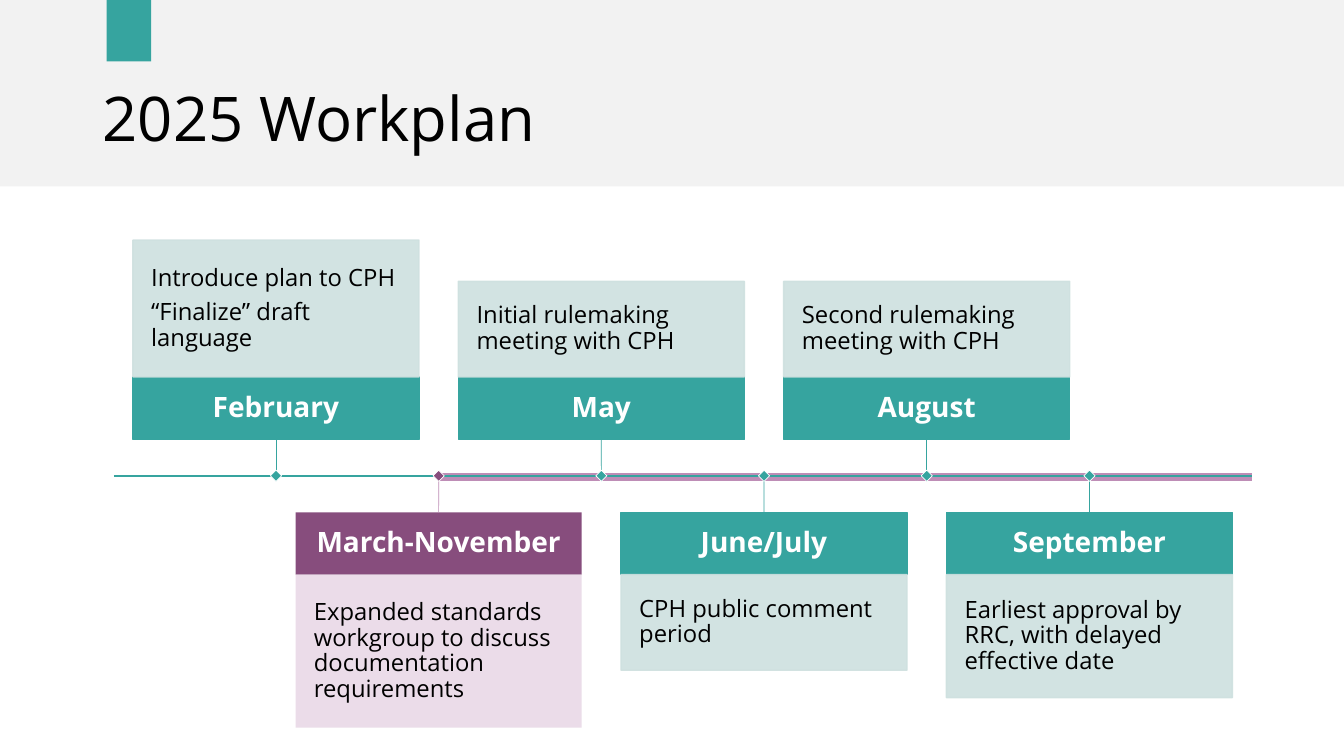
from dataclasses import dataclass

from lxml import etree
from pptx import Presentation
from pptx.dml.color import RGBColor
from pptx.enum.shapes import MSO_CONNECTOR, MSO_SHAPE
from pptx.enum.text import MSO_ANCHOR, MSO_AUTO_SIZE, PP_ALIGN
from pptx.oxml.ns import qn
from pptx.util import Cm, Pt

RECT = MSO_SHAPE.RECTANGLE
STRAIGHT = MSO_CONNECTOR.STRAIGHT
MIDDLE = MSO_ANCHOR.MIDDLE
LEFT, CENTER = PP_ALIGN.LEFT, PP_ALIGN.CENTER
NO_FIT = MSO_AUTO_SIZE.NONE

FONT = "Open Sans"
BLACK, WHITE, GREY = "000000", "FFFFFF", "F2F2F2"
TEAL, MINT = "36A49F", "CEE0DF"
PLUM, LILAC, PINK = "874D7D", "BE8DB6", "E9D9E7"

# Timeline measures in cm
FIRST, STEP, WIDTH = 3.35, 4.1, 7.21
HEAD, GAP, AXIS = 1.57, 0.92, 11.99
START, END = 2.87, 31.55
DOT = 0.2


@dataclass
class Stage:
    month: str
    tasks: list[str]
    height: float
    dark: str = TEAL
    pale: str = MINT
    stem: str = TEAL
    edged: bool = True


STAGES = [
    Stage("February", ["Introduce plan to CPH", "“Finalize” draft language"], 3.45),
    Stage("March-November",
          ["Expanded standards workgroup to discuss documentation requirements"],
          3.86, PLUM, PINK, LILAC, False),
    Stage("May", ["Initial rulemaking meeting with CPH"], 2.41),
    Stage("June/July", ["CPH public comment period"], 2.41),
    Stage("August", ["Second rulemaking meeting with CPH"], 2.41),
    Stage("September", ["Earliest approval by RRC, with delayed effective date"], 3.1),
]


def rgb(code: str) -> RGBColor:
    return RGBColor.from_string(code)


def add_box(slide, x: float, y: float, w: float, h: float, fill: str,
            edge: str = "", weight: float = 1):
    box = slide.shapes.add_shape(RECT, Cm(x), Cm(y), Cm(w), Cm(h))
    box.shadow.inherit = False
    box.fill.solid()
    box.fill.fore_color.rgb = rgb(fill)
    if edge:
        box.line.color.rgb = rgb(edge)
        box.line.width = Pt(weight)
    else:
        box.line.fill.background()
    return box


def add_line(slide, x1: float, y1: float, x2: float, y2: float,
             color: str, weight: float):
    line = slide.shapes.add_connector(STRAIGHT, Cm(x1), Cm(y1), Cm(x2), Cm(y2))
    line.line.color.rgb = rgb(color)
    line.line.width = Pt(weight)
    etree.SubElement(line.element.spPr, qn("a:effectLst"))
    return line


def fade(box, percent: int) -> None:
    for color in box.element.spPr.iter(qn("a:srgbClr")):
        etree.SubElement(color, qn("a:alpha")).set("val", str(percent * 1000))


def set_text(box, text: str, size: float, color: str, align, spacing: float,
             after: float = 0, bold: bool = False, inset: float = 0.25) -> None:
    frame = box.text_frame
    frame.text = text
    frame.word_wrap = True
    frame.auto_size = NO_FIT
    frame.vertical_anchor = MIDDLE
    frame.margin_left = frame.margin_right = Cm(inset)
    frame.margin_top = frame.margin_bottom = Cm(min(inset, 0.46))
    for para in frame.paragraphs:
        para.alignment = align
        para.line_spacing = spacing
        para.space_before = Pt(0)
        para.space_after = Pt(after)
        for run in para.runs:
            run.font.name = FONT
            run.font.size = Pt(size)
            run.font.bold = bold
            run.font.color.rgb = rgb(color)


def add_stage(slide, stage: Stage, x: float, above: bool) -> None:
    """Draw the month, its tasks and the stem down or up to the axis."""
    if above:
        top = AXIS - GAP - HEAD
        body_top, side = top - stage.height, 2
    else:
        top = AXIS + GAP
        body_top, side = top + HEAD, 0
    head = add_box(slide, x, top, WIDTH, HEAD, stage.dark,
                   stage.dark if stage.edged else "")
    set_text(head, stage.month, 20, WHITE, CENTER, 0.9, 7, True, 0.28)
    body = add_box(slide, x, body_top, WIDTH, stage.height, stage.pale,
                   stage.pale if stage.edged else "")
    fade(body, 90)
    set_text(body, "\n".join(stage.tasks), 17, BLACK, LEFT, 0.9, 6, inset=0.46)
    mid = x + WIDTH / 2
    stem = add_line(slide, mid, AXIS, mid, AXIS, stage.stem, 0.5)
    stem.begin_connect(head, side)


def main() -> None:
    deck = Presentation()
    deck.slide_width, deck.slide_height = Cm(33.87), Cm(19.05)
    slide = deck.slides.add_slide(deck.slide_layouts[5])

    # Title over its band
    title = slide.shapes.title
    title.left, title.top = Cm(2.34), Cm(1.02)
    title.width, title.height = Cm(29.21), Cm(3.68)
    set_text(title, "2025 Workplan", 44, BLACK, LEFT, 1.1)
    band = add_box(slide, 0, 0, 33.87, 4.7, GREY)
    tab = add_box(slide, 2.69, 0, 1.12, 1.55, TEAL)
    for back in (band, tab):
        title.element.addprevious(back.element)

    # Axis
    add_line(slide, 11.1, AXIS + 0.03, END, AXIS + 0.03, LILAC, 6)
    add_line(slide, START, AXIS, END, AXIS, TEAL, 1)

    # Stages, by turns above and below the axis
    for i, stage in enumerate(STAGES):
        add_stage(slide, stage, FIRST + i * STEP, i % 2 == 0)

    # Markers
    for i, stage in enumerate(STAGES):
        mid = FIRST + i * STEP + WIDTH / 2
        dot = add_box(slide, mid - DOT / 2, AXIS - DOT / 2, DOT, DOT,
                      stage.dark, WHITE, 0.5)
        dot.rotation = 45

    deck.save("out.pptx")


if __name__ == "__main__":
    main()
